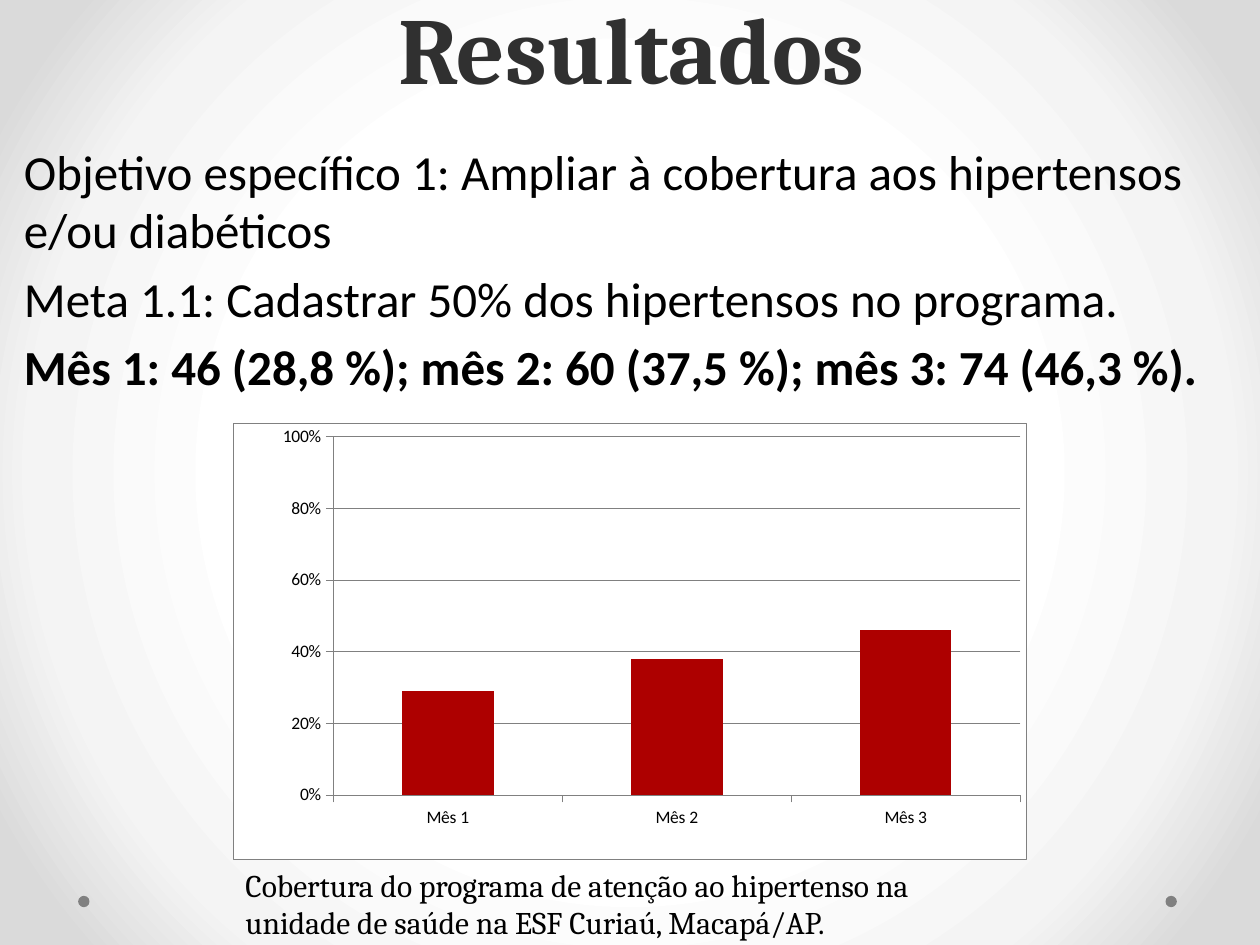
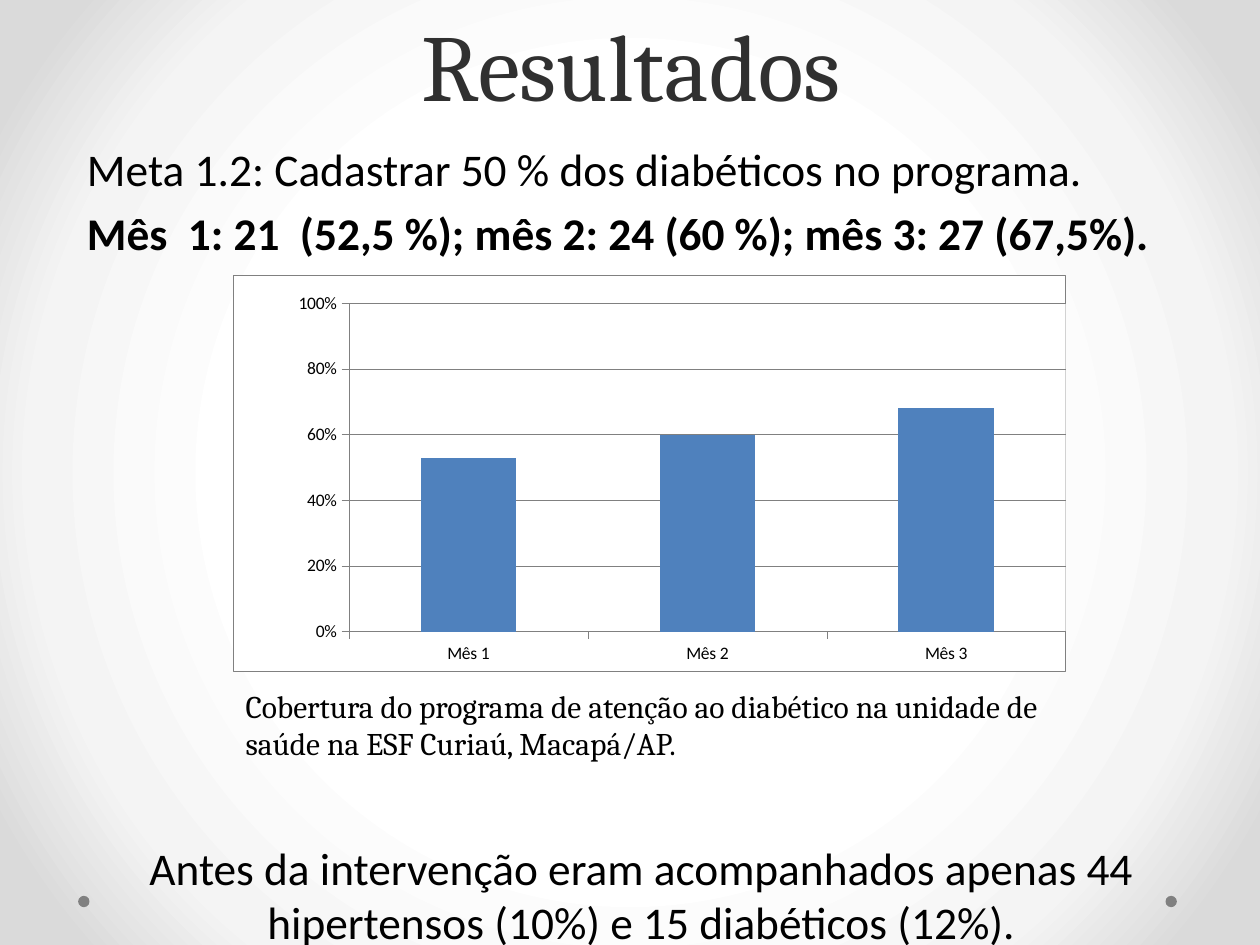
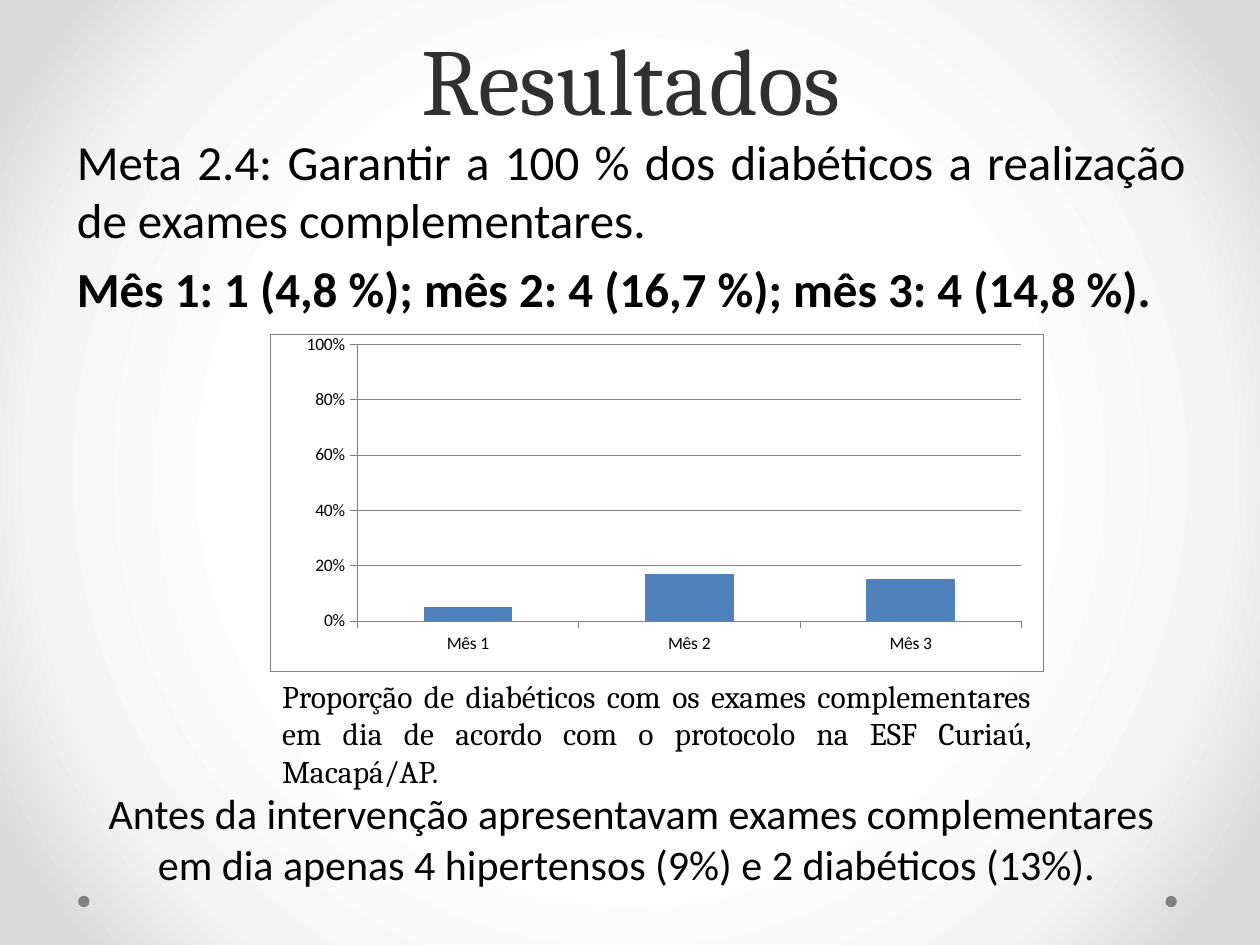
from pptx import Presentation
from pptx.chart.data import CategoryChartData
from pptx.dml.color import RGBColor
from pptx.enum.chart import XL_CHART_TYPE as ChartType, XL_TICK_MARK as TickMark
from pptx.enum.shapes import MSO_SHAPE as Shape
from pptx.enum.text import MSO_ANCHOR as Anchor, MSO_AUTO_SIZE as AutoSize, PP_ALIGN as Align
from pptx.oxml import parse_xml
from pptx.oxml.ns import nsdecls, qn
from pptx.util import Inches, Pt

COLORS = {
    "title": "303030", "text": "000000", "gray": "808080", "white": "FFFFFF",
    "mist": "F4F4F4", "edge": "DADADA", "red": "AD0000", "blue": "4F81BD",
}
HEADING_FONT, BODY_FONT = "Cambria", "Calibri"
MONTHS = ["Mês 1", "Mês 2", "Mês 3"]
GRADIENT = [(50, "white"), (76, "mist"), (92, "edge")]
DOT_LEFTS = (9.25, 0.62)
PARAGRAPH_GAP = 5.5

SLIDES = [
    {
        "title_at": (0.51, -0.88, 9, 1.75), "title_bold": True,
        "body_at": (0.09, 1.07, 9.88, 5.95), "size": 28, "align": Align.LEFT,
        "goals": ["Objetivo específico 1: Ampliar à cobertura aos hipertensos e/ou diabéticos",
                  "Meta 1.1: Cadastrar 50% dos hipertensos no programa."],
        "monthly": "Mês 1: 46 (28,8 %); mês 2: 60 (37,5 %); mês 3: 74 (46,3 %).",
        "chart_at": (1.85, 3.36, 6.3, 3.46), "plot": (0.126, 0.03, 0.866, 0.823),
        "rates": (0.29, 0.38, 0.46), "bars": "red",
        "caption": "Cobertura do programa de atenção ao hipertenso na unidade de saúde "
                   "na ESF Curiaú, Macapá/AP.",
        "caption_at": (1.85, 6.82, 6.3, 0.71), "caption_align": Align.LEFT,
    },
    {
        "title_at": (0.51, 0.13, 9, 0.88), "title_bold": False,
        "body_at": (0.59, 1.07, 9, 6.22), "size": 25.9, "align": Align.JUSTIFY,
        "goals": ["Meta 1.2: Cadastrar 50 % dos diabéticos no programa."],
        "monthly": "Mês  1: 21  (52,5 %); mês 2: 24 (60 %); mês 3: 27 (67,5%). ",
        "before": "Antes da intervenção eram acompanhados apenas 44 hipertensos (10%) "
                  "e 15 diabéticos (12%).",
        "before_size": 25.9, "before_gap": 331.5,
        "chart_at": (1.85, 2.18, 6.61, 3.15), "plot": (0.139, 0.072, 0.861, 0.828),
        "rates": (0.53, 0.6, 0.68), "bars": "blue",
        "caption": "Cobertura do programa de atenção ao diabético na unidade de saúde "
                   "na ESF Curiaú, Macapá/AP.",
        "caption_at": (1.85, 5.4, 6.61, 0.71), "caption_align": Align.LEFT,
    },
    {
        "title_at": (0.51, 0, 9, 1.12), "title_bold": False,
        "body_at": (0.51, 0.99, 9, 6.51), "size": 28, "align": Align.JUSTIFY,
        "goals": ["Meta 2.4: Garantir a 100 % dos diabéticos a realização de exames "
                  "complementares."],
        "monthly": "Mês 1: 1 (4,8 %); mês 2: 4 (16,7 %); mês 3: 4 (14,8 %). ",
        "before": "Antes da intervenção apresentavam exames complementares em dia apenas "
                  "4 hipertensos (9%) e 2 diabéticos (13%). ",
        "before_size": 24, "before_gap": 269,
        "chart_at": (2.14, 2.65, 6.14, 2.68), "plot": (0.113, 0.03, 0.859, 0.821),
        "rates": (0.05, 0.17, 0.15), "bars": "blue",
        "caption": "Proporção de diabéticos com os exames complementares em dia de acordo "
                   "com o protocolo na ESF Curiaú, Macapá/AP.",
        "caption_at": (2.14, 5.32, 6.14, 1.01), "caption_align": Align.JUSTIFY,
    },
]


def rgb(name):
    return RGBColor.from_string(COLORS[name])


def inches(box):
    return [Inches(length) for length in box]


def place(shape, box):
    shape.left, shape.top, shape.width, shape.height = inches(box)


def style(paragraph, font_name, size, color="text", bold=False, align=Align.LEFT):
    paragraph.alignment = align
    for run in paragraph.runs:
        font = run.font
        font.name, font.size, font.bold = font_name, Pt(size), bold
        font.color.rgb = rgb(color)


def set_background(master):
    stops = "".join(
        f'<a:gs pos="{pos * 1000}"><a:srgbClr val="{COLORS[name]}"/></a:gs>'
        for pos, name in GRADIENT)
    master.background.fill.solid()
    background = master.element.find(".//" + qn("p:bg"))
    background.replace(background[0], parse_xml(
        f'<p:bgPr {nsdecls("p", "a")}><a:gradFill rotWithShape="1"><a:gsLst>{stops}</a:gsLst>'
        '<a:path path="circle"><a:fillToRect l="50000" t="50000" r="50000" b="50000"/></a:path>'
        '</a:gradFill><a:effectLst/></p:bgPr>'))


def add_master_dots(master, slide):
    for left in DOT_LEFTS:
        dot = slide.shapes.add_shape(Shape.OVAL, *inches((left, 7.11, 0.09, 0.09)))
        dot.shadow.inherit = False
        dot.fill.solid()
        dot.fill.fore_color.rgb = rgb("gray")
        dot.line.fill.background()
        master.shapes.element.append(dot.element)


def fill_title(title, content):
    place(title, content["title_at"])
    frame = title.text_frame
    frame.text = "Resultados"
    frame.auto_size, frame.vertical_anchor = AutoSize.NONE, Anchor.BOTTOM
    heading = frame.paragraphs[0]
    heading.line_spacing = Pt(58)
    style(heading, HEADING_FONT, 54, "title", content["title_bold"], Align.CENTER)


def fill_body(body, content):
    place(body, content["body_at"])
    size, align = content["size"], content["align"]
    lines = [(goal, size, False, align, PARAGRAPH_GAP) for goal in content["goals"]]
    lines.append((content["monthly"], size, True, align, PARAGRAPH_GAP))
    if "before" in content:
        lines.append((content["before"], content["before_size"], False, Align.CENTER,
                      content["before_gap"]))
    frame = body.text_frame
    frame.text = "\n".join(line[0] for line in lines)
    frame.auto_size, frame.vertical_anchor = AutoSize.NONE, Anchor.TOP
    for index, (paragraph, line) in enumerate(zip(frame.paragraphs, lines)):
        _, line_size, bold, line_align, gap = line
        style(paragraph, BODY_FONT, line_size, bold=bold, align=line_align)
        paragraph.space_before = Pt(gap if index else 0)
        properties = paragraph._p.get_or_add_pPr()
        properties.set("marL", "0")
        properties.set("indent", "0")
        properties.append(parse_xml(f'<a:buNone {nsdecls("a")}/>'))


def thin_line(line):
    line.color.rgb = rgb("gray")
    line.width = Pt(0.25)


def frame_chart(chart, plot_box):
    fill = f'<a:solidFill><a:srgbClr val="{COLORS["white"]}"/></a:solidFill>'
    border = (f'<a:ln w="{Pt(0.25)}"><a:solidFill><a:srgbClr val="{COLORS["gray"]}"/>'
              '</a:solidFill></a:ln>')

    def panel(outline):
        return parse_xml(f'<c:spPr {nsdecls("c", "a")}>{fill}{outline}</c:spPr>')

    chart_part = chart.element.find(qn("c:chart"))
    chart_part.addnext(panel(border))
    plot_area = chart_part.find(qn("c:plotArea"))
    for layout in plot_area.findall(qn("c:layout")):
        plot_area.remove(layout)
    sides = "".join(f'<c:{side} val="{value}"/>' for side, value in zip("xywh", plot_box))
    plot_area.insert(0, parse_xml(
        f'<c:layout {nsdecls("c")}><c:manualLayout><c:layoutTarget val="inner"/>'
        f'<c:xMode val="edge"/><c:yMode val="edge"/>{sides}</c:manualLayout></c:layout>'))
    plot_area.append(panel("<a:ln><a:noFill/></a:ln>"))


def add_coverage_chart(slide, content):
    coverage = CategoryChartData(number_format="0%")
    coverage.categories = MONTHS
    coverage.add_series("Series 1", content["rates"])
    chart = slide.shapes.add_chart(
        ChartType.COLUMN_CLUSTERED, *inches(content["chart_at"]), coverage).chart
    chart.has_title = chart.has_legend = False
    months, percent = chart.category_axis, chart.value_axis
    percent.minimum_scale, percent.maximum_scale, percent.major_unit = 0, 1, 0.2
    percent.tick_labels.number_format = "0%"
    percent.tick_labels.number_format_is_linked = False
    percent.has_major_gridlines = True
    thin_line(percent.major_gridlines.format.line)
    for axis in (months, percent):
        axis.major_tick_mark = TickMark.OUTSIDE
        thin_line(axis.format.line)
    for font in (chart.font, months.tick_labels.font, percent.tick_labels.font):
        font.name, font.size = BODY_FONT, Pt(10)
        font.color.rgb = rgb("text")
    bars = chart.plots[0]
    bars.gap_width, bars.vary_by_categories = 150, False
    bar_fill = bars.series[0].format.fill
    bar_fill.solid()
    bar_fill.fore_color.rgb = rgb(content["bars"])
    frame_chart(chart, content["plot"])


def add_caption(slide, content):
    frame = slide.shapes.add_textbox(*inches(content["caption_at"])).text_frame
    frame.word_wrap, frame.auto_size = True, AutoSize.SHAPE_TO_FIT_TEXT
    frame.text = content["caption"]
    style(frame.paragraphs[0], HEADING_FONT, 18, align=content["caption_align"])


def main():
    deck = Presentation()
    deck.slide_width, deck.slide_height = Inches(10), Inches(7.5)
    set_background(deck.slide_master)
    for content in SLIDES:
        slide = deck.slides.add_slide(deck.slide_layouts[1])
        fill_title(slide.shapes.title, content)
        fill_body(slide.placeholders[1], content)
        add_coverage_chart(slide, content)
        add_caption(slide, content)
    add_master_dots(deck.slide_master, deck.slides[0])
    deck.save("out.pptx")


if __name__ == "__main__":
    main()
